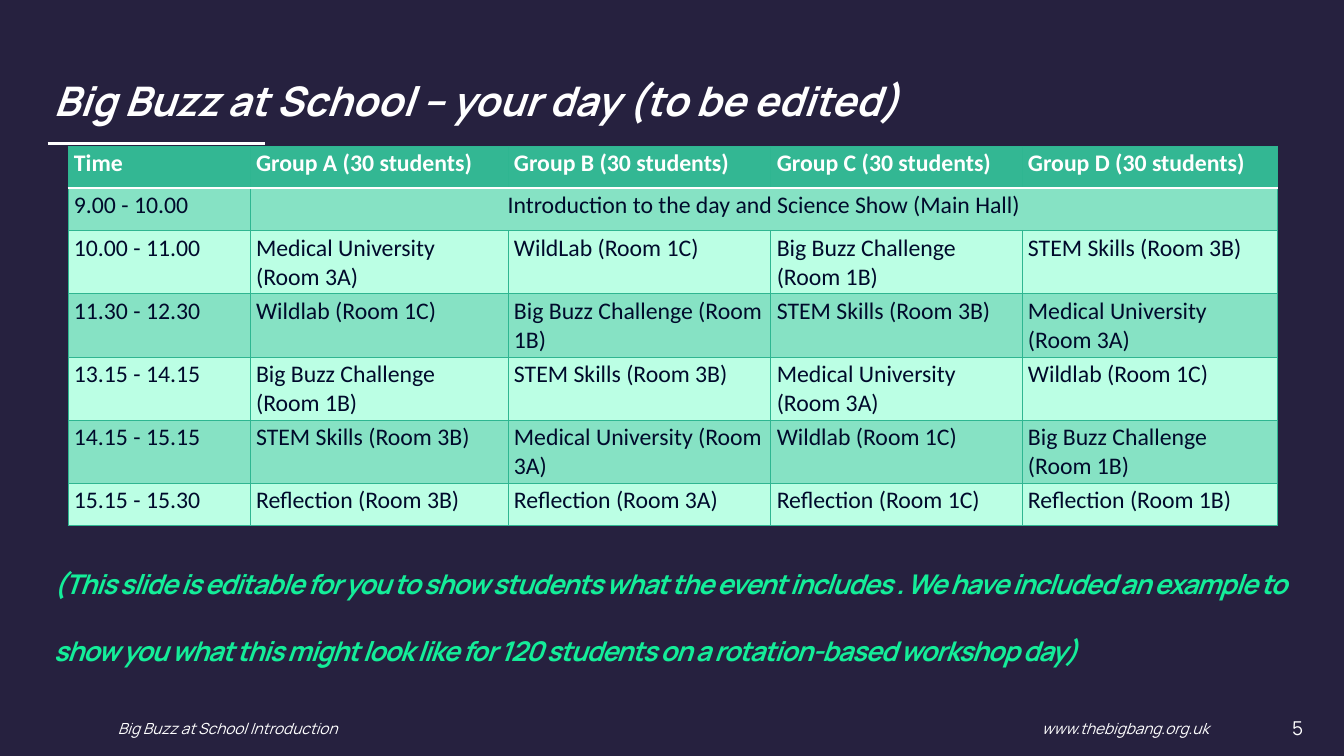
from lxml import etree
from pptx import Presentation
from pptx.dml.color import RGBColor
from pptx.enum.shapes import MSO_CONNECTOR
from pptx.enum.text import PP_ALIGN
from pptx.oxml.ns import qn
from pptx.util import Inches, Pt

LEFT, CENTER, RIGHT = PP_ALIGN.LEFT, PP_ALIGN.CENTER, PP_ALIGN.RIGHT
STRAIGHT = MSO_CONNECTOR.STRAIGHT

NAVY = RGBColor(0x26, 0x21, 0x3F)
WHITE = RGBColor(0xFF, 0xFF, 0xFF)
INK = RGBColor(0x00, 0x0A, 0x2B)
NEON_GREEN = RGBColor(0x14, 0xED, 0x99)
HEADER_GREEN = RGBColor(0x33, 0xB7, 0x93)
BORDER_GREEN = RGBColor(0x2F, 0xB6, 0x91)
DARK_BAND = RGBColor(0x86, 0xE2, 0xC4)
LIGHT_BAND = RGBColor(0xBB, 0xFF, 0xE4)

HEADING_FONT, TABLE_FONT = "Manrope", "Calibri"
SLIDE_WIDTH, SLIDE_HEIGHT = 21.99, 12.37
ROW_HEIGHT = 0.69
COLUMN_WIDTHS = [2.98, 4.22, 4.3, 4.11, 4.18]

MEDICAL = "Medical University (Room 3A)"
CHALLENGE = "Big Buzz Challenge (Room 1B)"
SKILLS = "STEM Skills (Room 3B)"
ANIMALS = "Wildlab (Room 1C)"
TIMETABLE = [
    ["Time"] + [f"Group {group} (30 students)" for group in "ABCD"],
    ["9.00 - 10.00", "Introduction to the day and Science Show (Main Hall)"],
    ["10.00 - 11.00", MEDICAL, "WildLab (Room 1C)", CHALLENGE, SKILLS],
    ["11.30 - 12.30", ANIMALS, CHALLENGE, SKILLS, MEDICAL],
    ["13.15 - 14.15", CHALLENGE, SKILLS, MEDICAL, ANIMALS],
    ["14.15 - 15.15", SKILLS, MEDICAL, ANIMALS, CHALLENGE],
    ["15.15 - 15.30"] + [f"Reflection (Room {room})" for room in ("3B", "3A", "1C", "1B")],
]
NOTE = ("(This slide is editable for you to show students what the event includes . "
        "We have included an example to show you what this might look like for "
        "120 students on a rotation-based workshop day)")


def style_font(paragraph, name, size, color, bold=False, italic=False):
    font = paragraph.font
    font.name, font.size, font.bold, font.italic = name, Pt(size), bold, italic
    font.color.rgb = color


def add_text(slide, box, text, size, color=WHITE, bold=False, italic=True, align=LEFT):
    """Add a one-paragraph text box and return its paragraph."""
    frame = slide.shapes.add_textbox(*map(Inches, box)).text_frame
    frame.word_wrap = True
    paragraph = frame.paragraphs[0]
    paragraph.text = text
    paragraph.alignment = align
    style_font(paragraph, HEADING_FONT, size, color, bold, italic)
    return paragraph


def add_title(slide, left, top, width, height):
    add_text(slide, (left, top, width, height),
             "Big Buzz at School – your day (to be edited)", 48, bold=True)
    rule_y = Inches(top + 1.16)
    rule = slide.shapes.add_connector(
        STRAIGHT, Inches(left), rule_y, Inches(left + 3.55), rule_y)
    rule.line.color.rgb = WHITE
    rule.line.width = Pt(4)
    etree.SubElement(rule._element.spPr, qn("a:effectLst"))


def add_border(cell, side, color, width):
    properties = cell._tc.get_or_add_tcPr()
    line = etree.SubElement(properties, qn(f"a:ln{side}"), w=str(Pt(width)))
    fill = etree.SubElement(line, qn("a:solidFill"))
    etree.SubElement(fill, qn("a:srgbClr"), val=str(color))


def style_cell(cell, row):
    for side in "LRTB":
        header_edge = (row, side) in ((0, "B"), (1, "T"))
        add_border(cell, side, *((WHITE, 2) if header_edge else (BORDER_GREEN, 0.75)))
    cell.fill.solid()
    band = DARK_BAND if row % 2 else LIGHT_BAND
    cell.fill.fore_color.rgb = band if row else HEADER_GREEN


def add_timetable(slide, left, top):
    rows, columns = len(TIMETABLE), len(COLUMN_WIDTHS)
    table = slide.shapes.add_table(
        rows, columns, Inches(left), Inches(top),
        Inches(sum(COLUMN_WIDTHS)), Inches(rows * ROW_HEIGHT)).table
    for column, width in zip(table.columns, COLUMN_WIDTHS):
        column.width = Inches(width)
    for row, texts in enumerate(TIMETABLE):
        for column in range(columns):
            style_cell(table.cell(row, column), row)
        for column, text in enumerate(texts):
            paragraph = table.cell(row, column).text_frame.paragraphs[0]
            paragraph.text = text
            style_font(paragraph, TABLE_FONT, 28, INK if row else WHITE, bold=row == 0)
    introduction = table.cell(1, 1)
    introduction.merge(table.cell(1, columns - 1))
    introduction.text_frame.paragraphs[0].alignment = CENTER


def add_note(slide, left, top, width, height):
    paragraph = add_text(slide, (left, top, width, height), NOTE, 32, NEON_GREEN, bold=True)
    paragraph.line_spacing = Pt(80)
    paragraph.runs[0].font._element.set("spc", "-150")


def add_footer(slide, top, height):
    add_text(slide, (1.83, top, 7.67, height), "Big Buzz at School Introduction", 18)
    add_text(slide, (16.95, top, 3.21, height), "www.thebigbang.org.uk", 18)
    add_text(slide, (20.18, top - 0.05, 1.24, height), "5", 22.5, italic=False, align=RIGHT)


def main():
    presentation = Presentation()
    presentation.slide_width = Inches(SLIDE_WIDTH)
    presentation.slide_height = Inches(SLIDE_HEIGHT)
    slide = presentation.slides.add_slide(presentation.slide_layouts[6])
    background = slide.background.fill
    background.solid()
    background.fore_color.rgb = NAVY
    add_footer(slide, 11.72, 0.4)
    add_note(slide, 0.78, 8.65, 21.18, 2.32)
    add_title(slide, 0.78, 1.19, 16.12, 0.86)
    add_timetable(slide, 1.11, 2.39)
    presentation.save("out.pptx")


if __name__ == "__main__":
    main()
